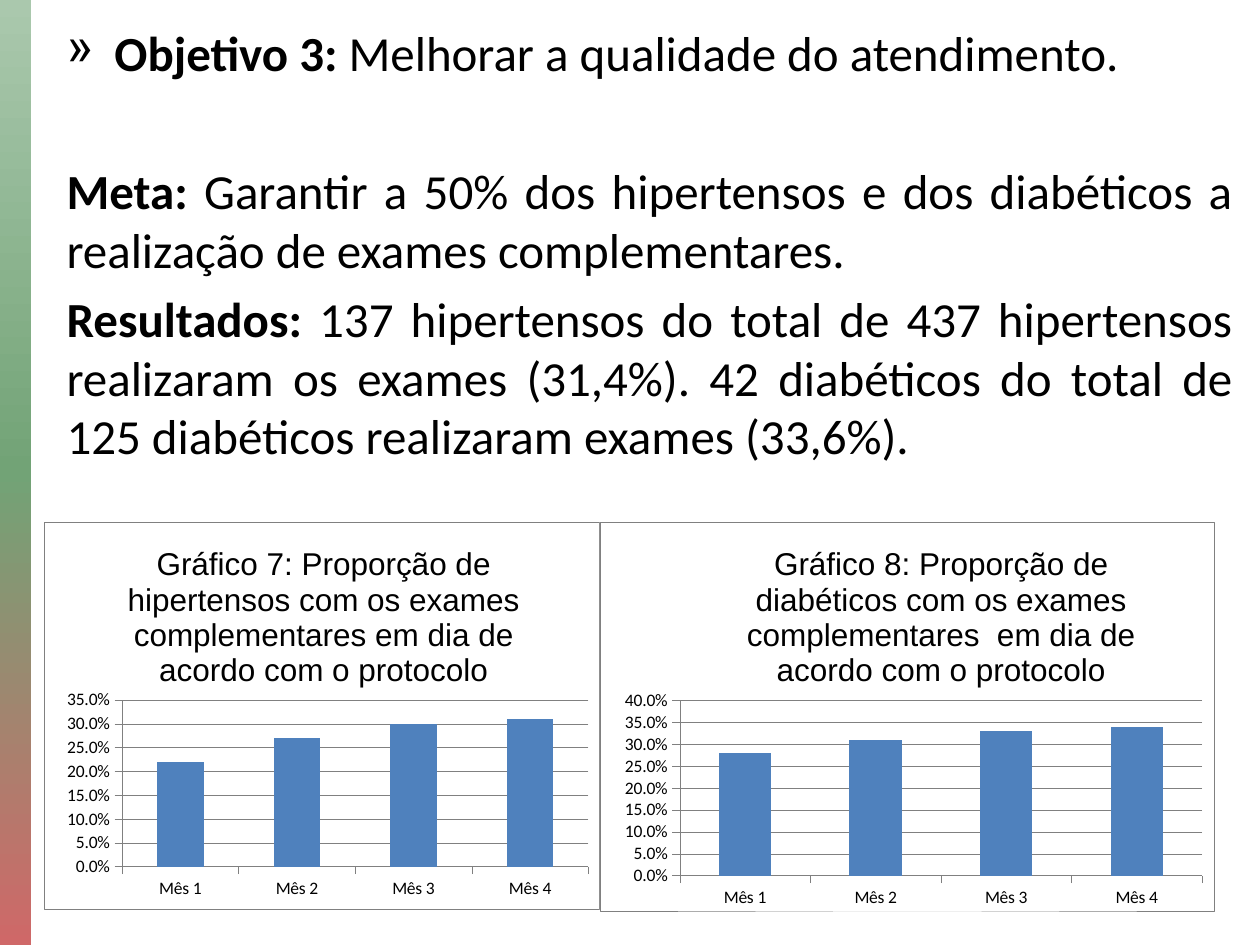
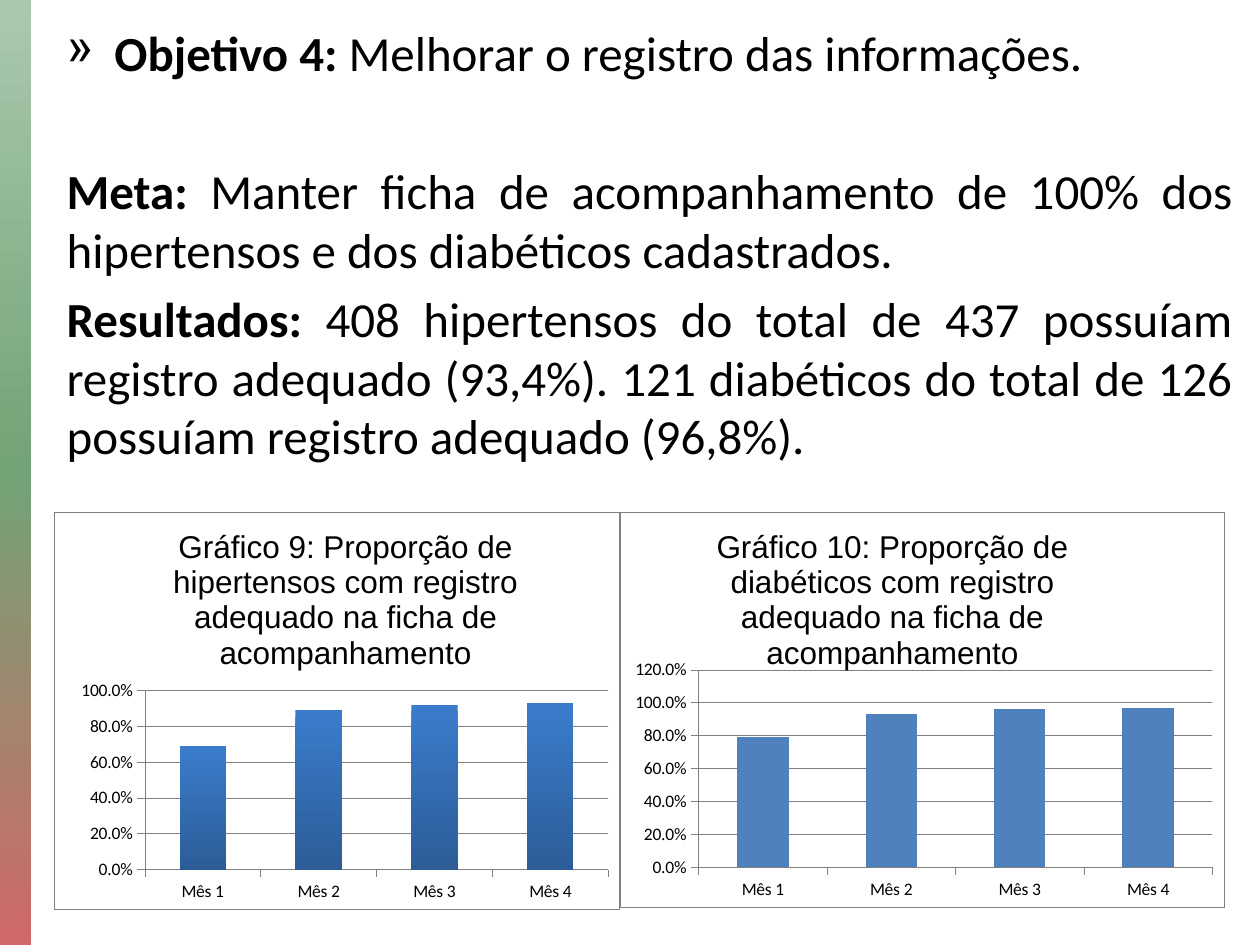
"""Builds two slides of health programme results, each with goals and two column charts."""
import copy

import lxml.etree
import pptx
import pptx.chart.data
import pptx.dml.color
import pptx.enum.chart
import pptx.enum.shapes
import pptx.enum.text
import pptx.oxml
import pptx.oxml.ns
import pptx.util

RGBColor = pptx.dml.color.RGBColor
Inches = pptx.util.Inches
Pt = pptx.util.Pt
qn = pptx.oxml.ns.qn

BLACK = RGBColor(0x00, 0x00, 0x00)
GREY = RGBColor(0x80, 0x80, 0x80)
BLUE = RGBColor(0x4F, 0x81, 0xBD)
BAR_GRADIENT = [RGBColor(0x3A, 0x7C, 0xCB), RGBColor(0x2C, 0x5D, 0x98)]
BAND_GRADIENT = [RGBColor(0xAA, 0xC8, 0xAD), RGBColor(0x72, 0xA3, 0x76), RGBColor(0xCF, 0x68, 0x68)]

BODY_FONT, TITLE_FONT = "Calibri", "Arial"
BODY_SIZE = 28
SPACE_BEFORE = 0.2 * BODY_SIZE
EMPTY_ROW = 1.22 * BODY_SIZE
HANGING = Inches(0.38)
MONTHS = ["Mês 1", "Mês 2", "Mês 3", "Mês 4"]
FRAME_XML = (
    f"<c:spPr {pptx.oxml.ns.nsdecls('c', 'a')}>"
    '<a:solidFill><a:srgbClr val="FFFFFF"/></a:solidFill>'
    f'<a:ln w="{Pt(0.25)}"><a:solidFill><a:srgbClr val="{GREY}"/></a:solidFill></a:ln>'
    "</c:spPr>"
)

SLIDES = [
    {
        "text": [
            ("Objetivo 3: ", "Melhorar a qualidade do atendimento."),
            ("Meta: ", "Garantir a 50% dos hipertensos e dos diabéticos a realização de exames complementares."),
            ("Resultados: ", "137 hipertensos do total de 437 hipertensos realizaram os exames (31,4%). "
             "42 diabéticos do total de 125 diabéticos realizaram exames (33,6%)."),
        ],
        "left": 0.35, "top": 4.14,
        "charts": [
            {"title": "Gráfico 7: Proporção de hipertensos com os exames complementares em dia de acordo com o protocolo",
             "size": (4.41, 3.08), "values": [0.22, 0.27, 0.30, 0.31], "axis": (0.35, 0.05),
             "title_at": (0.14, 0.04), "plot": (0.14, 0.46, 0.84, 0.43), "gradient": False},
            {"title": "Gráfico 8: Proporção de diabéticos com os exames complementares  em dia de acordo com o protocolo",
             "size": (4.88, 3.09), "values": [0.28, 0.31, 0.33, 0.34], "axis": (0.40, 0.05),
             "title_at": (0.23, 0.04), "plot": (0.13, 0.46, 0.85, 0.45), "gradient": False},
        ],
    },
    {
        "text": [
            ("Objetivo 4: ", "Melhorar o registro das informações."),
            ("Meta: ", "Manter ficha de acompanhamento de 100% dos hipertensos e dos diabéticos cadastrados."),
            ("Resultados: ", "408 hipertensos do total de 437 possuíam registro adequado (93,4%). "
             "121 diabéticos do total de 126 possuíam registro adequado (96,8%)."),
        ],
        "left": 0.43, "top": 4.06,
        "charts": [
            {"title": "Gráfico 9: Proporção de hipertensos com registro adequado na ficha de acompanhamento",
             "size": (4.49, 3.16), "values": [0.69, 0.89, 0.92, 0.93], "axis": (1.0, 0.2),
             "title_at": (0.20, 0.02), "plot": (0.16, 0.45, 0.82, 0.45), "gradient": True},
            {"title": "Gráfico 10: Proporção de diabéticos com registro adequado na ficha de acompanhamento",
             "size": (4.80, 3.14), "values": [0.79, 0.93, 0.96, 0.97], "axis": (1.2, 0.2),
             "title_at": (0.15, 0.02), "plot": (0.13, 0.40, 0.85, 0.50), "gradient": False},
        ],
    },
]


def paint_gradient(fill, owner, colours):
    fill.gradient()
    fill.gradient_angle = 270
    stop_list = owner.find(".//" + qn("a:gsLst"))
    for _ in colours[2:]:
        stop_list.append(copy.deepcopy(stop_list[0]))
    for index, (stop, colour) in enumerate(zip(fill.gradient_stops, colours)):
        stop.color.rgb = colour
        stop.position = index / (len(colours) - 1)


def set_layout(owner, slot, shares):
    for old_layout in owner.findall(qn("c:layout")):
        owner.remove(old_layout)
    layout = lxml.etree.Element(qn("c:layout"))
    manual = lxml.etree.SubElement(layout, qn("c:manualLayout"))
    if len(shares) == 4:
        lxml.etree.SubElement(manual, qn("c:layoutTarget")).set("val", "inner")
    for mode in ("xMode", "yMode"):
        lxml.etree.SubElement(manual, qn("c:" + mode)).set("val", "edge")
    for side, share in zip("xywh", shares):
        lxml.etree.SubElement(manual, qn("c:" + side)).set("val", str(share))
    owner.insert(slot, layout)


deck = pptx.Presentation()
deck.slide_width, deck.slide_height = Inches(10), Inches(7.5)

for content in SLIDES:
    page = deck.slides.add_slide(deck.slide_layouts[6])

    band = page.shapes.add_shape(
        pptx.enum.shapes.MSO_SHAPE.RECTANGLE, 0, 0, Inches(0.25), deck.slide_height)
    band.shadow.inherit = False
    band.line.fill.background()
    paint_gradient(band.fill, band.element, BAND_GRADIENT)

    box = page.shapes.add_textbox(Inches(0.43), Inches(0.13), Inches(9.45), Inches(3.7))
    frame = box.text_frame
    frame.word_wrap = True
    for row, (label, sentence) in enumerate(content["text"]):
        para = frame.paragraphs[0] if row == 0 else frame.add_paragraph()
        para.alignment = pptx.enum.text.PP_ALIGN.JUSTIFY
        if row == 0:
            properties = para._p.get_or_add_pPr()
            properties.set("marL", str(HANGING))
            properties.set("indent", str(-HANGING))
            lxml.etree.SubElement(properties, qn("a:buChar")).set("char", "»")
        para.space_before = Pt(2 * SPACE_BEFORE + EMPTY_ROW if row == 1 else SPACE_BEFORE)
        para.font.name = BODY_FONT
        para.font.size = Pt(BODY_SIZE)
        para.font.color.rgb = BLACK
        for words, bold in ((label, True), (sentence, False)):
            span = para.add_run()
            span.text = words
            span.font.bold = bold

    left = content["left"]
    for graph in content["charts"]:
        data = pptx.chart.data.CategoryChartData(number_format="0.0%")
        data.categories = MONTHS
        data.add_series("Series 1", graph["values"])
        width, height = graph["size"]
        chart = page.shapes.add_chart(
            pptx.enum.chart.XL_CHART_TYPE.COLUMN_CLUSTERED,
            Inches(left), Inches(content["top"]), Inches(width), Inches(height), data).chart
        left += width

        chart.has_legend = False
        chart.font.name = BODY_FONT
        chart.font.size = Pt(11)
        chart.font.color.rgb = BLACK
        chart_space = chart._chartSpace
        chart_space.find(qn("c:chart")).addnext(pptx.oxml.parse_xml(FRAME_XML))

        heading = chart.chart_title.text_frame.paragraphs[0]
        heading.text = graph["title"]
        heading.font.name = TITLE_FONT
        heading.font.size = Pt(18)
        heading.font.bold = False
        heading.font.color.rgb = BLACK
        set_layout(chart_space.find(".//" + qn("c:title")), 1, graph["title_at"])
        set_layout(chart_space.find(".//" + qn("c:plotArea")), 0, graph["plot"])

        plot = chart.plots[0]
        plot.gap_width = 150
        plot.vary_by_categories = False
        series = plot.series[0]
        if graph["gradient"]:
            paint_gradient(series.format.fill, series._element, BAR_GRADIENT)
        else:
            series.format.fill.solid()
            series.format.fill.fore_color.rgb = BLUE

        scale = chart.value_axis
        scale.minimum_scale = 0
        scale.maximum_scale, scale.major_unit = graph["axis"]
        scale.has_major_gridlines = True
        scale.tick_labels.number_format = "0.0%"
        scale.tick_labels.number_format_is_linked = False
        for axis in (chart.category_axis, scale):
            axis.major_tick_mark = pptx.enum.chart.XL_TICK_MARK.OUTSIDE
            axis.tick_labels.font.name = BODY_FONT
            axis.tick_labels.font.size = Pt(10)
            axis.tick_labels.font.color.rgb = BLACK
        for line in (chart.category_axis.format.line, scale.format.line, scale.major_gridlines.format.line):
            line.color.rgb = GREY
            line.width = Pt(0.25)

deck.save("out.pptx")
